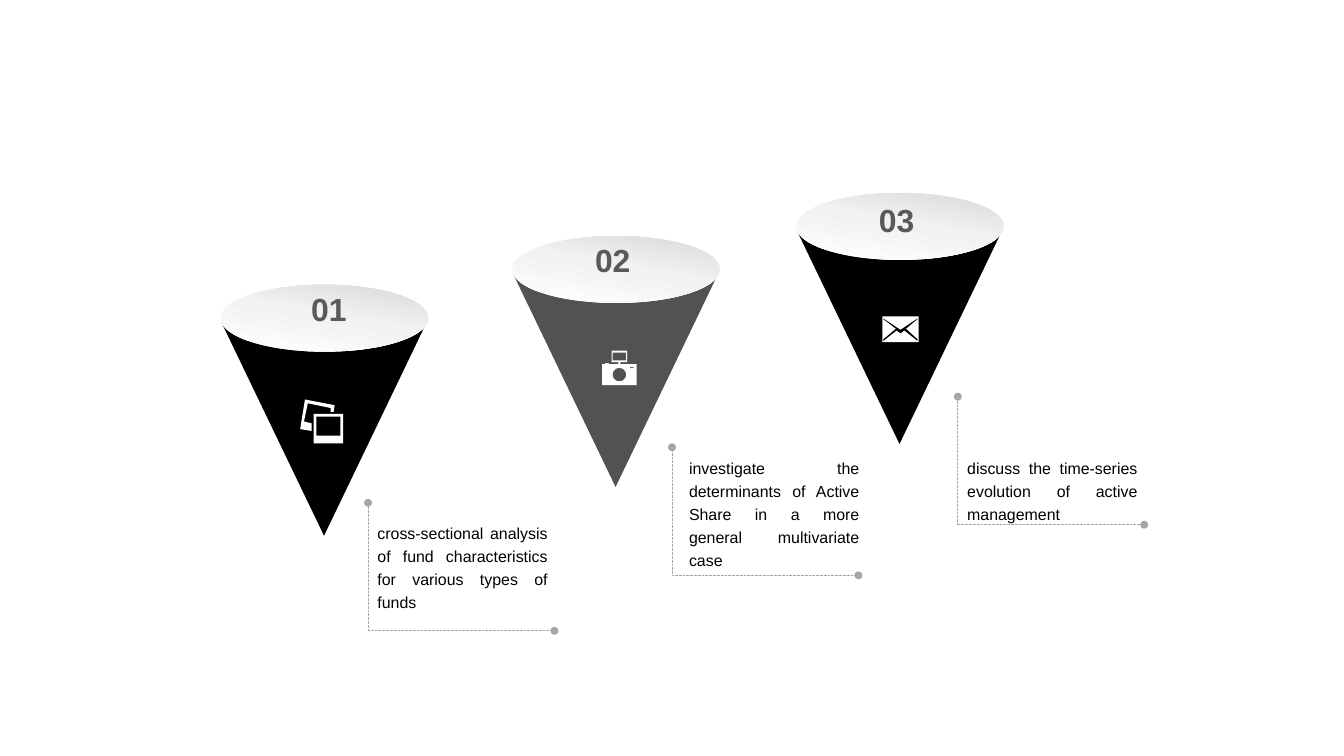
import copy
import math
from lxml import etree
from pptx import Presentation, util as u
from pptx.dml.color import RGBColor
from pptx.enum import dml, shapes, text
from pptx.oxml.ns import qn

# All lengths are cells of a fine grid, 100 cells to the inch
COLS, ROWS = 1406, 791
CELL = 9144
FINE = 10  # outline steps per cell


def box(left, top, right, low):
    return [(left, top), (right, top), (right, low), (left, low)]


def ring(mid_x, mid_y, rad, count=48):
    turns = [2 * math.pi * i / count for i in range(count)]
    return [(mid_x + rad * math.cos(t), mid_y + rad * math.sin(t)) for t in turns]


# Outlines, each measured from its own top left
CONE = [[(208, 39), (215, 40), (108, 262.5), (1, 40), (9, 39)]]
PHOTOS = [
    box(14, 15, 45, 46), box(17, 18, 42, 38),
    [(5, 0), (36, 6), (35, 13), (32, 13), (32, 9), (8, 4), (4, 23),
     (12, 25), (12, 33), (0, 31)],
]
CAMERA = [
    [(19, 14), (19, 12), (26, 12), (26, 0), (10, 0), (10, 12), (17, 12),
     (17, 14), (7, 14), (7, 13), (3, 13), (3, 14), (0, 14), (0, 36),
     (36, 36), (36, 14)],
    box(11, 2, 25, 10), ring(18, 25, 7), box(29, 17, 33, 18),
]
LETTER = [
    box(0, 0, 38, 27),
    [(37, 3), (25, 13), (37, 24), (37, 26), (23, 15), (19, 18), (15, 15),
     (1, 26), (1, 24), (14, 13), (1, 3), (1, 2), (19, 14), (37, 2)],
]

# Content: rim, number, icon, bracket corner and note of each cone
STEPS = [
    dict(num="01", fill="000000", rim=(231, 298), label=(315, 290),
         icon=PHOTOS, spot=(314, 418), corner=(385, 660), note=(385, 539, 107),
         words="cross-sectional analysis of fund characteristics for various types of funds"),
    dict(num="02", fill="525252", rim=(536, 247), label=(612, 239),
         icon=CAMERA, spot=(630, 367), corner=(703, 602), note=(711, 471, 131),
         words="investigate the determinants of Active Share in a more general multivariate case"),
    dict(num="03", fill="000000", rim=(833, 202), label=(909, 197),
         icon=LETTER, spot=(923, 331), corner=(1002, 549), note=(1002, 471, 83),
         words="discuss the time-series evolution of active management"),
]
RIM_SIZE = (217, 70)
RIM_STOPS = [(0, "FFFFFF"), (0.53, "F2F2F2"), (1, "D9D9D9")]
NUM_SIZE = (58, 54)
NOTE_WIDTH = 198
ARMS = [(195, 0), (0, -134)]

deck = Presentation()
deck.slide_width, deck.slide_height = COLS * CELL, ROWS * CELL
slide = deck.slides.add_slide(deck.slide_layouts[6])


def tint(code):
    return RGBColor.from_string(code)


def cells(*sizes):
    return [u.Emu(round(s * CELL)) for s in sizes]


def outline(spot, paths, fill):
    left, top = spot
    pts = [[(round((left + x) * FINE), round((top + y) * FINE)) for x, y in path]
           for path in paths]
    pen = slide.shapes.build_freeform(*pts[0][0], scale=CELL / FINE)
    pen.add_line_segments(pts[0][1:], close=True)
    for path in pts[1:]:
        pen.move_to(*path[0])
        pen.add_line_segments(path[1:], close=True)
    form = pen.convert_to_shape()
    form.shadow.inherit = False
    form.fill.solid()
    form.fill.fore_color.rgb = tint(fill)
    form.line.fill.background()


def rim(spot):
    oval = slide.shapes.add_shape(shapes.MSO_SHAPE.OVAL, *cells(*spot, *RIM_SIZE))
    oval.shadow.inherit = False
    oval.line.fill.background()
    oval.fill.gradient()
    oval.fill.gradient_angle = 80
    first = oval._element.spPr.find(".//" + qn("a:gs"))
    first.addnext(copy.deepcopy(first))
    for stop, (pos, code) in zip(oval.fill.gradient_stops, RIM_STOPS):
        stop.position = pos
        stop.color.rgb = tint(code)


def write(place, words, size, code, align, bold=False, wrap=True):
    frame = slide.shapes.add_textbox(*cells(*place)).text_frame
    frame.word_wrap = wrap
    frame.auto_size = text.MSO_AUTO_SIZE.SHAPE_TO_FIT_TEXT
    para = frame.paragraphs[0]
    para.alignment = align
    para.line_spacing = 1.2
    run = para.add_run()
    run.text = words
    run.font.name = "Arial"
    run.font.size = u.Pt(size)
    run.font.bold = bold
    run.font.color.rgb = tint(code)


def arm(corner, reach):
    end = (corner[0] + reach[0], corner[1] + reach[1])
    rule = slide.shapes.add_connector(shapes.MSO_CONNECTOR.STRAIGHT, *cells(*corner, *end))
    rule.line.color.rgb = tint("A6A6A6")
    rule.line.width = u.Pt(0.5)
    rule.line.dash_style = dml.MSO_LINE.ROUND_DOT
    etree.SubElement(rule.line._get_or_add_ln(), qn("a:tailEnd"), type="oval")
    etree.SubElement(rule._element.spPr, qn("a:effectLst"))


for step in STEPS:
    # Cone with its rim, number and icon
    outline(step["rim"], CONE, step["fill"])
    rim(step["rim"])
    write((*step["label"], *NUM_SIZE), step["num"], 24, "595959",
          text.PP_ALIGN.CENTER, bold=True, wrap=False)
    outline(step["spot"], step["icon"], "FFFFFF")
    # Note in its dotted bracket
    left, top, high = step["note"]
    write((left, top, NOTE_WIDTH, high), step["words"], 12, "000000",
          text.PP_ALIGN.JUSTIFY)
    for reach in ARMS:
        arm(step["corner"], reach)

deck.save("out.pptx")
